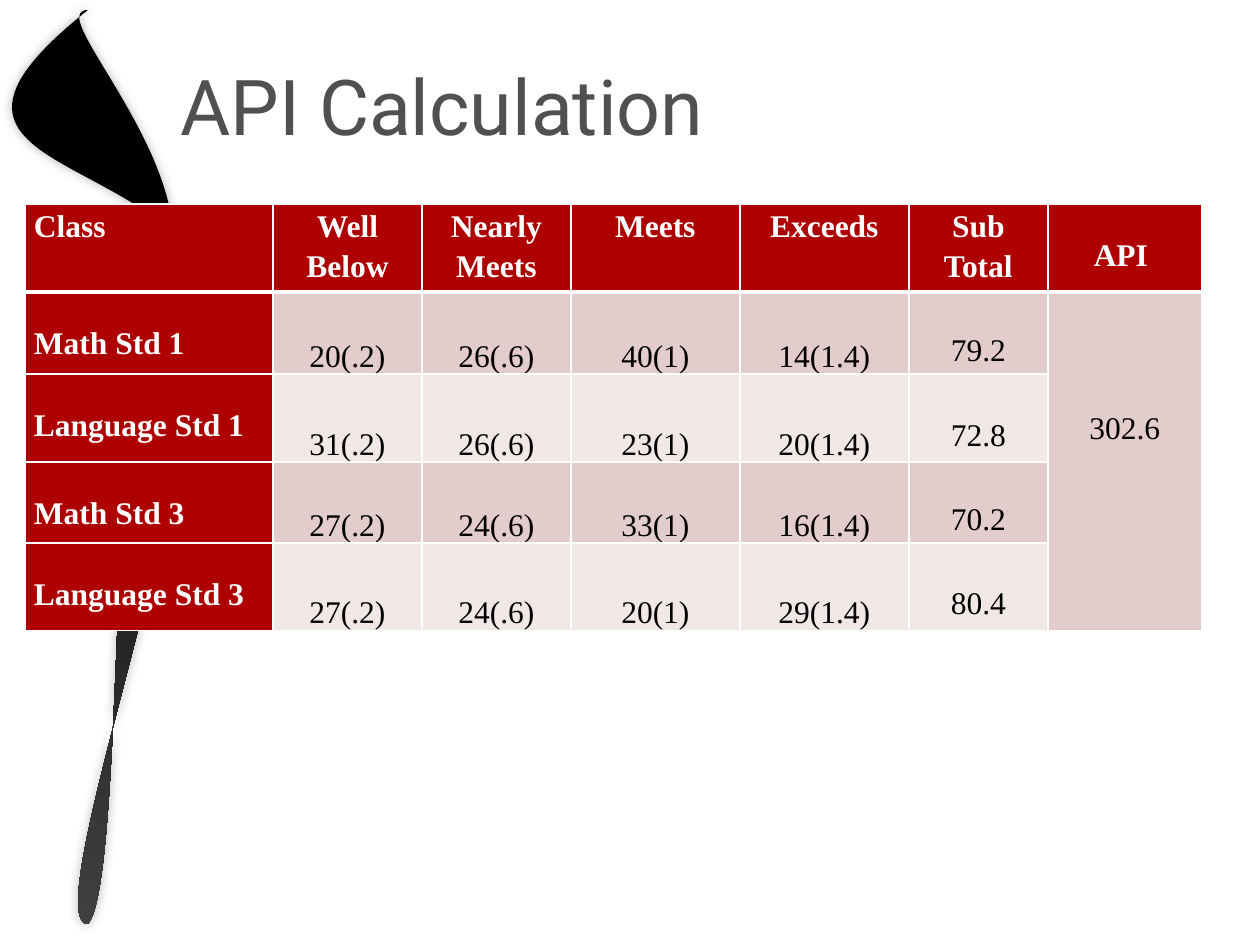
from lxml import etree
from pptx import Presentation
from pptx.dml.color import RGBColor
from pptx.enum.text import MSO_ANCHOR, PP_ALIGN
from pptx.oxml import parse_xml
from pptx.oxml.ns import nsdecls, qn
from pptx.util import Pt

TOP, MIDDLE, BOTTOM = MSO_ANCHOR.TOP, MSO_ANCHOR.MIDDLE, MSO_ANCHOR.BOTTOM
CENTER, JUSTIFY = PP_ALIGN.CENTER, PP_ALIGN.JUSTIFY
PX = 914400 // 126

TITLE = "API Calculation"
TITLE_BOX = (168, 10, 937, 189)
HEADERS = ["Class", "Well Below", "Nearly Meets", "Meets", "Exceeds", "Sub\nTotal", "API "]
ROWS = [
    ["Math Std 1", "20(.2)", "26(.6)", "40(1)", "14(1.4)", "79.2", "302.6"],
    ["Language Std 1", "31(.2)", "26(.6)", "23(1)", "20(1.4)", "72.8", ""],
    ["Math Std 3", "27(.2)", "24(.6)", "33(1)", "16(1.4)", "70.2", ""],
    ["Language Std 3", "27(.2)", "24(.6)", "20(1)", "29(1.4)", "80.4", ""],
]
TABLE_LEFT, TABLE_TOP = 25, 204
COL_WIDTHS = [248, 149, 149, 169, 169, 139, 154]
ROW_HEIGHTS = [88, 82, 88, 81, 88]
SUB_TOTAL, API = 5, 6
API_OFFSET = 114
CELL_INSET = 9
RED, BANDS = "AE0000", ("E3CCCC", "F2E7E7")

RIBBON_START = (122, 423)
RIBBON_CURVES = [
    [(134, 222), (71, 372), (69, 372)],
    [(324, 271), (26, 10), (88, 10)],
    [(-136, 188), (205, 140), (224, 329)],
    [(253, 198), (159, 282), (136, 382)],
    [(113, 480), (120, 887), (88, 924)],
    [(26, 924), (284, 261), (122, 423)],
]


def rgb(value):
    return RGBColor.from_string(value)


def px(value):
    return value * PX


def add_ribbon(slide):
    builder = slide.shapes.build_freeform(*RIBBON_START, scale=PX)
    builder.add_line_segments([pt for curve in RIBBON_CURVES for pt in curve], close=True)
    sp = builder.convert_to_shape()
    lines = list(sp.element.iter(qn("a:lnTo")))
    for i in range(0, len(RIBBON_CURVES) * 3, 3):
        curve = etree.Element(qn("a:cubicBezTo"))
        lines[i].addprevious(curve)
        for line in lines[i:i + 3]:
            curve.append(line[0])
            line.getparent().remove(line)
    sp.line.fill.background()
    sp.fill.gradient()
    sp.fill.gradient_angle = 270
    for stop, position, color in zip(sp.fill.gradient_stops, (0.25, 1), ("000000", "404040")):
        stop.position = position
        stop.color.rgb = rgb(color)
    sp.shadow.inherit = False
    effects = sp.element.spPr.find(qn("a:effectLst"))
    effects.append(parse_xml(
        f'<a:outerShdw {nsdecls("a")} blurRad="{Pt(6)}" dist="0" dir="0">'
        '<a:srgbClr val="404040"><a:alpha val="40000"/></a:srgbClr></a:outerShdw>'))


def add_title(slide):
    tf = slide.shapes.add_textbox(*map(px, TITLE_BOX)).text_frame
    tf.word_wrap = True
    tf.vertical_anchor = MIDDLE
    tf.text = TITLE
    font = tf.paragraphs[0].runs[0].font
    font.name, font.size = "Roboto", Pt(44)
    font.color.rgb = rgb("505050")


def set_borders(cell, top, bottom):
    tcPr = cell._tc.get_or_add_tcPr()
    for side, width in (("L", 1), ("R", 1), ("T", top), ("B", bottom)):
        tcPr.append(parse_xml(
            f'<a:ln{side} {nsdecls("a")} w="{Pt(width)}"><a:solidFill>'
            f'<a:srgbClr val="FFFFFF"/></a:solidFill></a:ln{side}>'))


def style_cell(cell, row, col, text):
    header = row == 0
    heading = header or col == 0
    set_borders(cell, 3 if row == 1 else 1, 3 if header else 1)
    cell.fill.solid()
    cell.fill.fore_color.rgb = rgb(RED if heading else BANDS[(row - 1) % 2])
    cell.margin_left = cell.margin_right = px(CELL_INSET)
    cell.margin_top = cell.margin_bottom = 0
    if heading or col == API:
        cell.vertical_anchor = TOP
    else:
        cell.vertical_anchor = MIDDLE if col == SUB_TOTAL else BOTTOM
    single = (header and col != API) or (not header and col == API)
    cell.text_frame.text = text
    for p in cell.text_frame.paragraphs:
        p.alignment = JUSTIFY if col == 0 else CENTER
        p.line_spacing = 1.15 if single else 2.0
        for r in p.runs:
            r.font.name, r.font.size = "Times New Roman", Pt(18)
            r.font.bold = heading
            r.font.color.rgb = rgb("FFFFFF" if heading else "000000")


def add_scores(slide):
    content = [HEADERS] + ROWS
    table = slide.shapes.add_table(
        len(content), len(HEADERS), px(TABLE_LEFT), px(TABLE_TOP),
        px(sum(COL_WIDTHS)), px(sum(ROW_HEIGHTS))).table
    table.first_row = table.horz_banding = False
    for column, width in zip(table.columns, COL_WIDTHS):
        column.width = px(width)
    for row, height in zip(table.rows, ROW_HEIGHTS):
        row.height = px(height)
    for i, values in enumerate(content):
        for j, text in enumerate(values):
            style_cell(table.cell(i, j), i, j, text)
    total = table.cell(1, API)
    total.merge(table.cell(len(ROWS), API))
    total.margin_top = px(API_OFFSET)


def main():
    prs = Presentation()
    prs.slide_width, prs.slide_height = px(1260), px(945)
    slide = prs.slides.add_slide(prs.slide_layouts[6])
    add_ribbon(slide)
    add_title(slide)
    add_scores(slide)
    prs.save("out.pptx")


if __name__ == "__main__":
    main()
